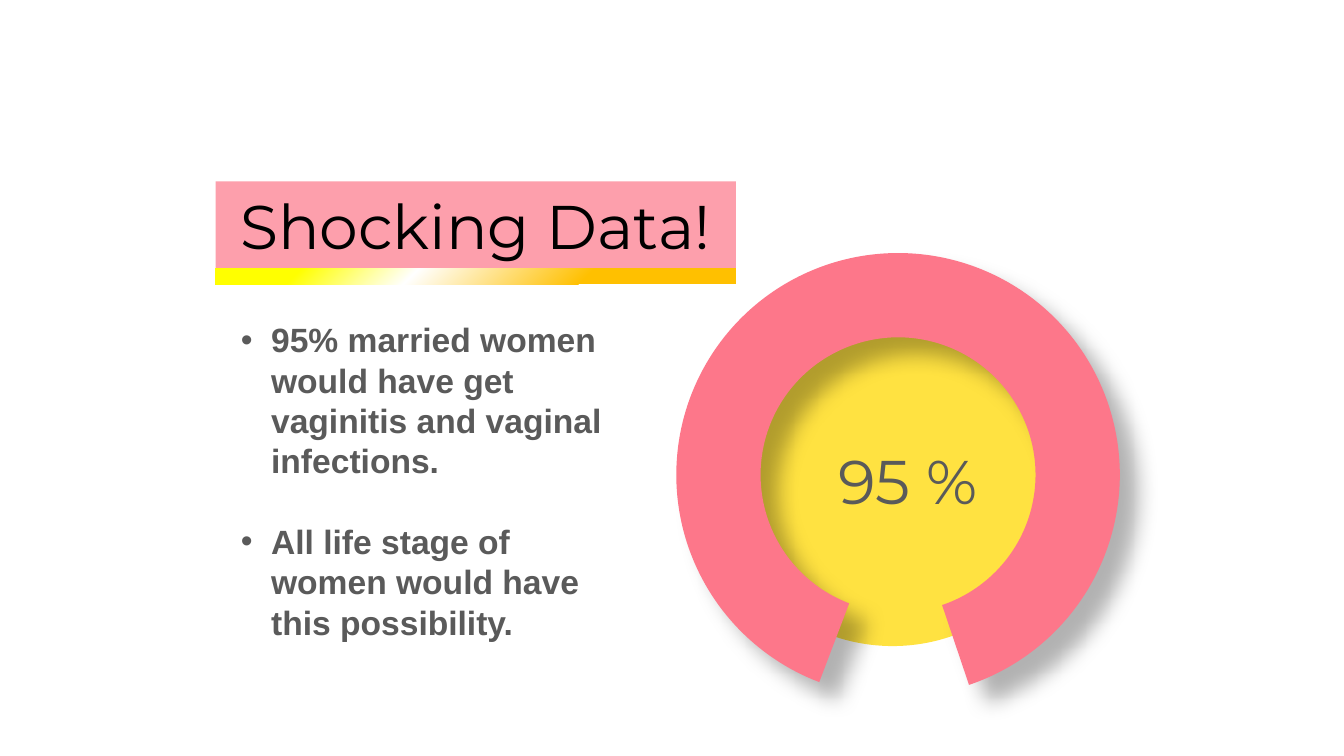
from dataclasses import dataclass

from lxml.etree import SubElement
from pptx import Presentation
from pptx.dml.color import RGBColor
from pptx.enum.shapes import MSO_SHAPE
from pptx.enum.text import MSO_ANCHOR, MSO_AUTO_SIZE, PP_ALIGN
from pptx.oxml import parse_xml
from pptx.oxml.ns import nsdecls, qn
from pptx.shapes.autoshape import Shape
from pptx.slide import Slide
from pptx.text.text import TextFrame
from pptx.util import Pt

COLORS = {
    "pink": "FD778A",
    "sun": "FFE241",
    "gray": "5A5A5A",
    "black": "000000",
    "yellow": "FFFF00",
    "white": "FFFFFF",
    "amber": "FFC000",
}
BULLETS = [
    "95% married women would have get vaginitis and vaginal infections.",
    "All life stage of women would have this possibility.",
]
BULLET_INDENT = 21.6
BULLET_GAP = 28.8


@dataclass(frozen=True)
class Area:
    left: float
    top: float
    width: float
    height: float

    def lengths(self) -> list[Pt]:
        return [Pt(n) for n in (self.left, self.top, self.width, self.height)]


@dataclass(frozen=True)
class TextStyle:
    font: str
    size: float
    color: str
    bold: bool = False


DISC = Area(508.3, 203, 258.5, 258.5)
RING = Area(483.1, 180.7, 316.8, 316.8)
SHARE = Area(581, 313.2, 135.4, 60.5)
FACTS = Area(165, 224.6, 275.8, 239.8)
TITLE = Area(154.1, 129.6, 371.5, 61.9)
STRIPE = Area(154.1, 191.5, 371.5, 11.5)

TITLE_STYLE = TextStyle("Montserrat", 44, "black")
SHARE_STYLE = TextStyle("Montserrat", 44, "gray")
FACT_STYLE = TextStyle("Arial", 24, "gray", bold=True)


def add_flat_shape(page: Slide, kind: MSO_SHAPE, area: Area, color: str) -> Shape:
    """Add a borderless shape with a solid fill and no shadow."""
    shape = page.shapes.add_shape(kind, *area.lengths())
    shape.shadow.inherit = False
    shape.fill.solid()
    shape.fill.fore_color.rgb = RGBColor.from_string(COLORS[color])
    shape.line.fill.background()
    return shape


def add_text_box(page: Slide, area: Area) -> TextFrame:
    frame = page.shapes.add_textbox(*area.lengths()).text_frame
    frame.word_wrap = True
    frame.auto_size = MSO_AUTO_SIZE.SHAPE_TO_FIT_TEXT
    return frame


def add_span(para, text: str, style: TextStyle) -> None:
    span = para.add_run()
    span.text = text
    span.font.name = style.font
    span.font.size = Pt(style.size)
    span.font.bold = style.bold
    span.font.color.rgb = RGBColor.from_string(COLORS[style.color])


def add_centered_line(frame: TextFrame, text: str, style: TextStyle) -> None:
    para = frame.paragraphs[0]
    para.alignment = PP_ALIGN.CENTER
    add_span(para, text, style)


def add_bullet(para) -> None:
    properties = para._p.get_or_add_pPr()
    properties.set("marL", str(Pt(BULLET_INDENT)))
    properties.set("indent", str(-Pt(BULLET_INDENT)))
    SubElement(properties, qn("a:buFont"), typeface="Arial")
    SubElement(properties, qn("a:buChar"), char="•")


def set_opacity(shape: Shape, percent: int) -> None:
    color = shape._element.spPr.find(qn("a:solidFill"))[0]
    SubElement(color, qn("a:alpha"), val=str(percent * 1000))


def cast_shadow(shape: Shape, blur: float, distance: float, angle: int, opacity: int) -> None:
    effects = shape._element.spPr.find(qn("a:effectLst"))
    shadow = SubElement(
        effects, qn("a:outerShdw"), blurRad=str(Pt(blur)), dist=str(Pt(distance)),
        dir=str(angle * 60000), algn="tl", rotWithShape="0",
    )
    color = SubElement(shadow, qn("a:srgbClr"), val=COLORS["black"])
    SubElement(color, qn("a:alpha"), val=str(opacity * 1000))


def set_radial_gradient(shape: Shape, stops: list[tuple[int, str]]) -> None:
    """Spread the stops, given in percent, in circles from the top left corner."""
    stop_xml = "".join(
        f'<a:gs pos="{percent * 1000}"><a:srgbClr val="{COLORS[color]}"/></a:gs>'
        for percent, color in stops
    )
    gradient = parse_xml(
        f'<a:gradFill {nsdecls("a")} rotWithShape="1"><a:gsLst>{stop_xml}</a:gsLst>'
        '<a:path path="circle"><a:fillToRect r="100000" b="100000"/></a:path></a:gradFill>'
    )
    properties = shape._element.spPr
    properties.replace(properties.find(qn("a:solidFill")), gradient)


def draw_ring(page: Slide) -> None:
    add_flat_shape(page, MSO_SHAPE.OVAL, DISC, "sun")
    ring = add_flat_shape(page, MSO_SHAPE.BLOCK_ARC, RING, "pink")
    for index, value in enumerate((135.43, 111.74, 0.19)):
        ring.adjustments[index] = value
    ring.rotation = 245.1
    cast_shadow(ring, blur=15, distance=18, angle=45, opacity=30)
    add_centered_line(add_text_box(page, SHARE), "95 %", SHARE_STYLE)


def draw_facts(page: Slide) -> None:
    frame = add_text_box(page, FACTS)
    for index, fact in enumerate(BULLETS):
        para = frame.add_paragraph() if index else frame.paragraphs[0]
        if index:
            para.space_before = Pt(BULLET_GAP)
        add_bullet(para)
        add_span(para, fact, FACT_STYLE)


def draw_title(page: Slide) -> None:
    banner = add_flat_shape(page, MSO_SHAPE.RECTANGLE, TITLE, "pink")
    set_opacity(banner, 70)
    banner.text_frame.vertical_anchor = MSO_ANCHOR.MIDDLE
    add_centered_line(banner.text_frame, "Shocking Data!", TITLE_STYLE)
    stripe = add_flat_shape(page, MSO_SHAPE.RECTANGLE, STRIPE, "yellow")
    set_radial_gradient(stripe, [(16, "yellow"), (38, "white"), (71, "amber")])


def main() -> None:
    deck = Presentation()
    deck.slide_width, deck.slide_height = Pt(960), Pt(540)
    page = deck.slides.add_slide(deck.slide_layouts[6])
    draw_ring(page)
    draw_facts(page)
    draw_title(page)
    deck.save("out.pptx")


if __name__ == "__main__":
    main()
